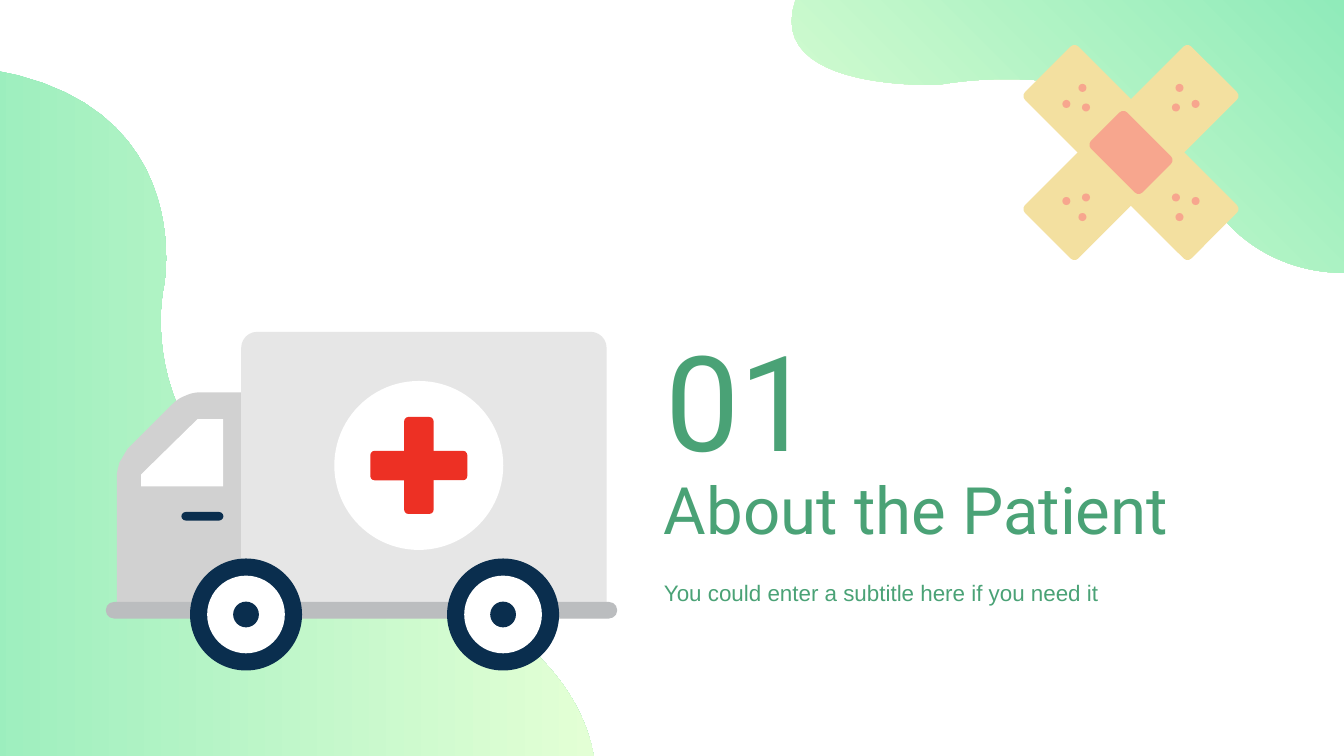
from pptx import Presentation
from pptx.dml.color import RGBColor
from pptx.enum.shapes import MSO_SHAPE
from pptx.enum.text import MSO_ANCHOR, MSO_AUTO_SIZE, PP_ALIGN
from pptx.util import Pt

OVAL = MSO_SHAPE.OVAL
ROUNDED = MSO_SHAPE.ROUNDED_RECTANGLE
ROUNDED_TOP = MSO_SHAPE.ROUND_2_SAME_RECTANGLE
TOP, MIDDLE = MSO_ANCHOR.TOP, MSO_ANCHOR.MIDDLE
LEFT = PP_ALIGN.LEFT
NO_AUTOFIT = MSO_AUTO_SIZE.NONE

COLORS = {
    "text": "4AA276", "mint": "90EBBA", "lime": "E3FFD5",
    "plaster": "F3E0A0", "pad": "F7A68E", "cab": "D1D1D1",
    "cargo": "E6E6E6", "bumper": "BBBDBF", "navy": "0A2E4E",
    "red": "ED3024", "white": "FFFFFF",
}

presentation = Presentation()
presentation.slide_width, presentation.slide_height = Pt(720), Pt(405)
slide = presentation.slides.add_slide(presentation.slide_layouts[0])


def add_part(kind, left, top, width, height, color, radius=None, rotation=0):
    shape = slide.shapes.add_shape(kind, Pt(left), Pt(top), Pt(width), Pt(height))
    shape.shadow.inherit = False
    shape.fill.solid()
    shape.fill.fore_color.rgb = RGBColor.from_string(COLORS[color])
    shape.line.fill.background()
    shape.rotation = rotation
    if radius is not None:
        shape.adjustments[0] = radius / min(width, height)
    return shape


def add_outline(start, segments, colors, angle=0):
    points, current = [], start
    for segment in segments:
        if len(segment) == 2:
            points.append(segment)
        else:
            x1, y1, x2, y2, x3, y3 = segment
            for step in range(1, 25):
                t = step / 24
                u = 1 - t
                points.append(tuple(
                    u**3 * a + 3 * u * u * t * b + 3 * u * t * t * c + t**3 * d
                    for a, b, c, d in zip(current, (x1, y1), (x2, y2), (x3, y3))
                ))
        current = points[-1]
    builder = slide.shapes.build_freeform(Pt(start[0]), Pt(start[1]))
    builder.add_line_segments([(Pt(x), Pt(y)) for x, y in points])
    shape = builder.convert_to_shape()
    shape.shadow.inherit = False
    shape.line.fill.background()
    if len(colors) == 1:
        shape.fill.solid()
        shape.fill.fore_color.rgb = RGBColor.from_string(COLORS[colors[0]])
    else:
        shape.fill.gradient()
        shape.fill.gradient_angle = angle
        for stop, color in zip(shape.fill.gradient_stops, colors):
            stop.color.rgb = RGBColor.from_string(COLORS[color])


add_outline((318.2, 405.8), [
    (313.9, 380.2, 293.8, 332.6, 198.7, 301),
    (63.4, 256.3, 87.8, 153.4, 87.8, 153.4),
    (87.8, 153.4, 112.3, 25.9, -61.9, 34.6),
    (-61.9, 405.8),
], ["mint", "lime"])
add_outline((720, 146.2), [
    (697.7, 146.2, 660.2, 137.5, 639.4, 92.2),
    (609.1, 24.5, 503.3, 45.4, 503.3, 45.4),
    (503.3, 45.4, 409, 49.7, 426.2, 0),
    (720, 0),
], ["lime", "mint"], angle=45)

title, subtitle = slide.placeholders
number = slide.shapes.add_textbox(0, 0, 0, 0)
texts = [
    (title, "About the Patient", (348.5, 244.1, 314.6, 48.2), TOP, "Roboto", 35),
    (number, "01", (349.2, 163.5, 314.6, 75.6), TOP, "Roboto", 71),
    (subtitle, "You could enter a subtitle here if you need it",
     (348.5, 306, 314.6, 23), MIDDLE, "Arial", 12),
]
for shape, text, box, anchor, font_name, size in texts:
    shape.left, shape.top, shape.width, shape.height = map(Pt, box)
    frame = shape.text_frame
    frame.text = text
    frame_format = {
        "word_wrap": True, "auto_size": NO_AUTOFIT, "vertical_anchor": anchor,
        "margin_left": Pt(7.2), "margin_right": Pt(7.2),
        "margin_top": Pt(7.2), "margin_bottom": Pt(7.2),
    }
    for name, value in frame_format.items():
        setattr(frame, name, value)
    paragraph = frame.paragraphs[0]
    paragraph.alignment = LEFT
    paragraph.space_before = Pt(0)
    font = paragraph.runs[0].font
    for name, value in {"name": font_name, "size": Pt(size), "bold": False}.items():
        setattr(font, name, value)
    font.color.rgb = RGBColor.from_string(COLORS["text"])

plaster_x, plaster_y = 605.9, 81.7
dot_offsets = [(26, 34.6), (34.6, 26), (24.1, 24.1)]
for slope in (-1, 1):
    for width, height, color in ((126, 40.4, "plaster"), (39, 27.4, "pad")):
        add_part(ROUNDED, plaster_x - width / 2, plaster_y - height / 2,
                 width, height, color, radius=2.9, rotation=45 * slope)
    for side in (-1, 1):
        for x, y in dot_offsets:
            add_part(OVAL, plaster_x + side * x - 2.15,
                     plaster_y + side * slope * y - 2.15, 4.3, 4.3, "pad")

add_outline((107.3, 210.2), [
    (104.4, 210.2, 101.5, 211, 99.4, 212),
    (96.5, 213.1, 94.3, 214.6, 92.2, 216.7),
    (68.4, 240.5),
    (67, 242.6, 65.5, 245.5, 64.1, 247.7),
    (63.4, 250.6, 62.6, 252.7, 62.6, 255.6),
    (62.6, 329), (129.6, 329), (129.6, 210.2),
], ["cab"])
add_outline((75.6, 260.6), [
    (119.5, 260.6), (119.5, 224.6), (105.8, 224.6), (75.6, 254.2),
], ["white"])
add_part(ROUNDED, 97.2, 274.3, 22.5, 4.6, "navy", radius=2.3)
add_part(ROUNDED_TOP, 129.2, 177.8, 195.8, 153.4, "cargo", radius=8.6)
add_part(OVAL, 179.1, 204.1, 90.5, 90.5, "white")
add_part(ROUNDED, 198.4, 241.5, 52, 15.8, "red", radius=2.3)
add_part(ROUNDED, 216.5, 223.4, 15.8, 52, "red", radius=2.3)
add_part(ROUNDED, 56.7, 322.5, 274, 8.9, "bumper", radius=4.45)

for wheel_x in (131.8, 269.5):
    for radius, color in ((30, "navy"), (20.8, "white"), (6.9, "navy")):
        add_part(OVAL, wheel_x - radius, 329.2 - radius, 2 * radius, 2 * radius, color)

presentation.save("out.pptx")
